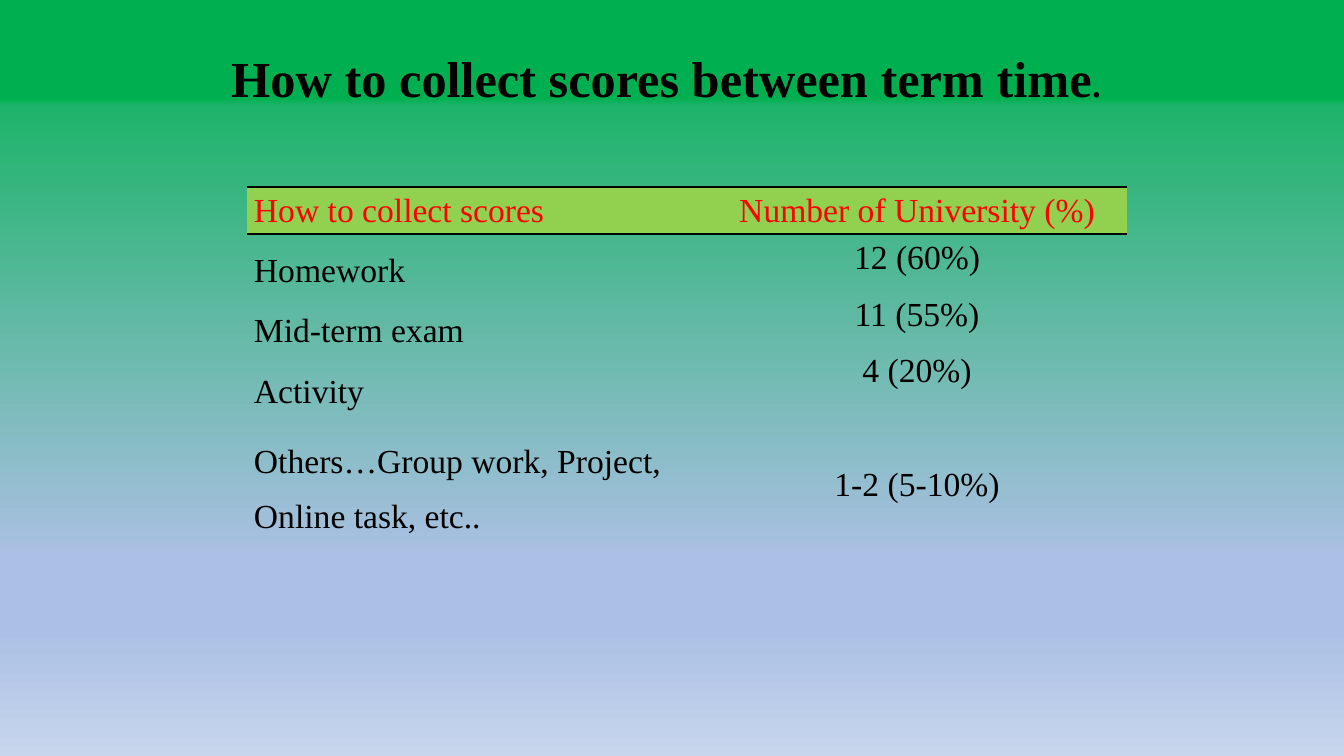
from dataclasses import dataclass

from lxml.etree import SubElement
from pptx import Presentation
from pptx.dml.color import RGBColor
from pptx.enum.text import MSO_ANCHOR, MSO_AUTO_SIZE, PP_ALIGN as Align
from pptx.oxml.ns import qn
from pptx.util import Emu, Pt

SCALE = 12192000 / 1344


def px(n: int) -> Emu:
    return Emu(round(n * SCALE))


@dataclass(frozen=True)
class Theme:
    font: str = "Times New Roman"
    ink: str = "000000"
    head: str = "FF0000"
    band: str = "92D050"
    title: int = 36
    body: int = 24
    stops: tuple = ((13, "00B050"), (14, "1EB36A"), (74, "ABC0E4"),
                    (83, "ABC0E4"), (100, "C7D5ED"))
    plain: str = "{2D5ABB26-0587-4C30-8999-92F81FD0307C}"


@dataclass(frozen=True)
class Entry:
    row: int
    col: int
    lines: tuple
    space: float = 1.15
    color: str = Theme.ink
    gaps: tuple = ()


THEME = Theme()
COLS = (460, 420)
ROWS = (47, 58, 58, 323)
ENTRIES = (
    Entry(0, 0, ("How to collect scores",), color=THEME.head),
    Entry(0, 1, ("Number of University (%)",), color=THEME.head),
    Entry(1, 0, ("Homework",), 1.5),
    Entry(2, 0, ("Mid-term exam",), 1.5),
    Entry(3, 0, ("Activity", "Others…Group work, Project, Online task, etc.."), 1.5),
    Entry(1, 1, ("12 (60%)", "11 (55%)", "4 (20%)", "1-2 (5-10%)"), gaps=(0, 0, 0, 41)),
)


def write(para, text: str, *, size: int = THEME.body, color: str = THEME.ink,
          bold: bool = False, align=Align.LEFT, space: float = 1.0,
          before: int = 0, after: int = 0) -> None:
    para.alignment = align
    para.line_spacing = space
    para.space_before = Pt(before)
    para.space_after = Pt(after)
    run = para.add_run()
    run.text = text
    run.font.name = THEME.font
    run.font.size = Pt(size)
    run.font.bold = bold
    run.font.color.rgb = RGBColor.from_string(color)


def paint(slide) -> None:
    fill = slide.background.fill
    fill.gradient()
    fill.gradient_angle = 270
    stops = next(slide.element.iter(qn("a:gsLst")))
    for old in list(stops):
        stops.remove(old)
    for pos, color in THEME.stops:
        stop = SubElement(stops, qn("a:gs"), pos=str(pos * 1000))
        SubElement(stop, qn("a:srgbClr"), val=color)


def rule(cell, side: str) -> None:
    props = cell._tc.get_or_add_tcPr()
    line = SubElement(props, qn(f"a:{side}"), w=str(Pt(1)))
    fill = SubElement(line, qn("a:solidFill"))
    SubElement(fill, qn("a:srgbClr"), val=THEME.ink)


def fill_cell(table, entry: Entry) -> None:
    cell = table.cell(entry.row, entry.col)
    cell.margin_left = cell.margin_right = px(7)
    cell.margin_top = cell.margin_bottom = 0
    if entry.row == 0:
        rule(cell, "lnT")
        rule(cell, "lnB")
        cell.fill.solid()
        cell.fill.fore_color.rgb = RGBColor.from_string(THEME.band)
    else:
        cell.fill.background()
    frame = cell.text_frame
    gaps = entry.gaps or (0,) * len(entry.lines)
    for i, (text, gap) in enumerate(zip(entry.lines, gaps)):
        para = frame.add_paragraph() if i else frame.paragraphs[0]
        write(para, text, color=entry.color, space=entry.space, before=gap, after=10,
              align=Align.CENTER if entry.col else Align.LEFT)


def add_scores(slide) -> None:
    frame = slide.shapes.add_table(len(ROWS), len(COLS), px(247), px(187),
                                   px(sum(COLS)), px(sum(ROWS)))
    table = frame.table
    table.first_row = table.horz_banding = False
    next(table._tbl.iter(qn("a:tableStyleId"))).text = THEME.plain
    for col, width in zip(table.columns, COLS):
        col.width = px(width)
    for row, height in zip(table.rows, ROWS):
        row.height = px(height)
    table.cell(1, 1).merge(table.cell(3, 1))
    for entry in ENTRIES:
        fill_cell(table, entry)


def add_title(slide) -> None:
    title = slide.shapes.title
    title.left, title.top, title.width, title.height = map(px, (115, 41, 1102, 72))
    frame = title.text_frame
    frame.word_wrap = True
    frame.auto_size = MSO_AUTO_SIZE.SHAPE_TO_FIT_TEXT
    frame.vertical_anchor = MSO_ANCHOR.MIDDLE
    para = frame.paragraphs[0]
    for text, size in (("How to collect scores between term time", THEME.title),
                       (".", THEME.body)):
        write(para, text, size=size, bold=True, align=Align.CENTER)


def main() -> None:
    deck = Presentation()
    deck.slide_width, deck.slide_height = px(1344), px(756)
    slide = deck.slides.add_slide(deck.slide_layouts[5])
    paint(slide)
    add_scores(slide)
    add_title(slide)
    deck.save("out.pptx")


if __name__ == "__main__":
    main()
